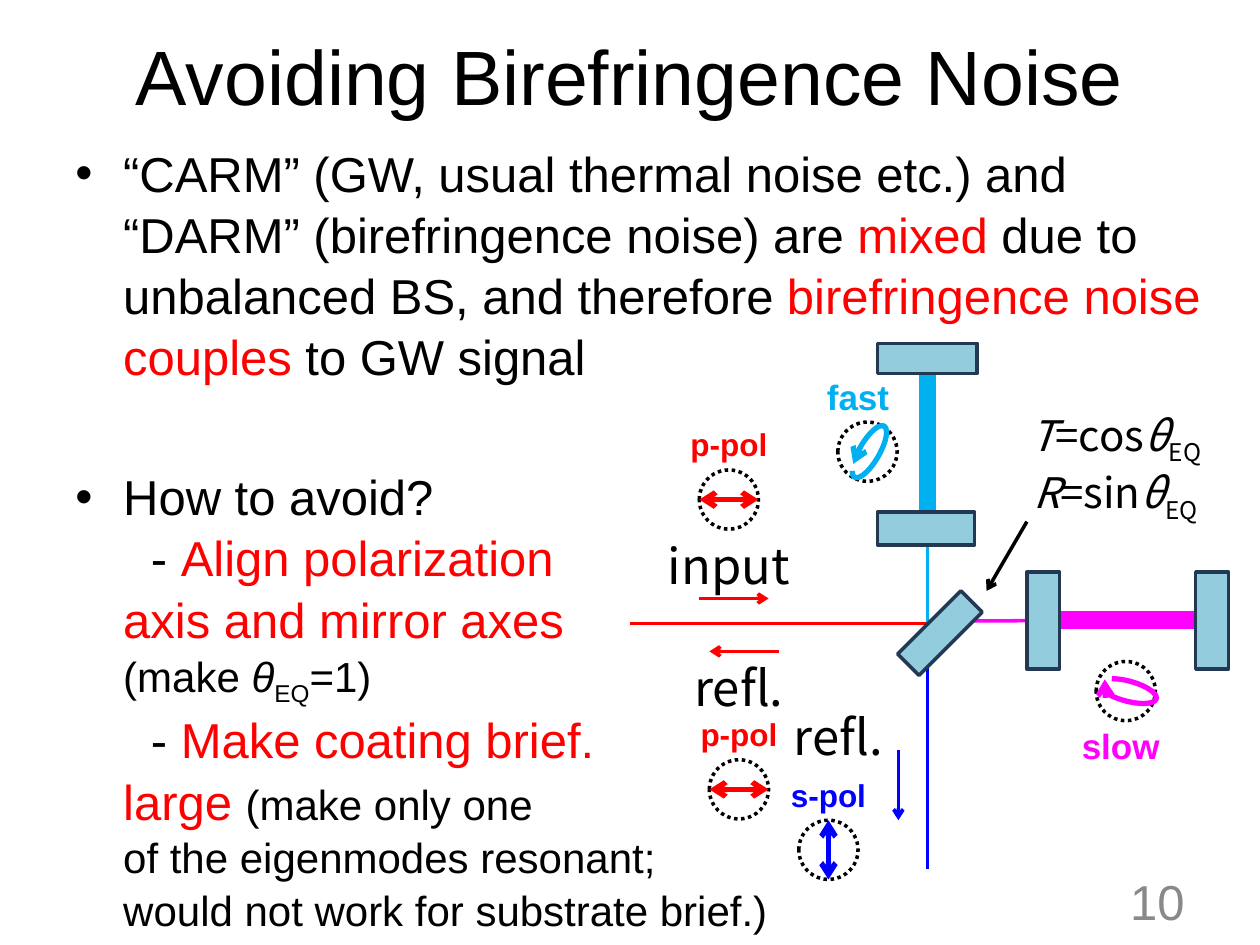
from collections import namedtuple

from lxml import etree
from pptx import Presentation, util as u
from pptx.dml.color import RGBColor
from pptx.enum import dml, shapes, text
from pptx.oxml import ns

BLACK = RGBColor(0x00, 0x00, 0x00)
RED = RGBColor(0xFF, 0x00, 0x00)
BLUE = RGBColor(0x00, 0x00, 0xFF)
CYAN = RGBColor(0x00, 0xB0, 0xF0)
MAGENTA = RGBColor(0xFF, 0x00, 0xFF)
GRAY = RGBColor(0x89, 0x89, 0x89)
MIRROR_FILL = RGBColor(0x93, 0xCD, 0xDD)
MIRROR_LINE = RGBColor(0x23, 0x39, 0x53)
SANS, CJK = "Arial", "Noto Sans CJK JP"
COLUMNS, ROWS = 100, 75
CELL = u.Inches(10) // COLUMNS
CENTER, RIGHT = text.PP_ALIGN.CENTER, text.PP_ALIGN.RIGHT
BADGE = 4.7

Box = namedtuple("Box", "left top width height")


def inside(box, left, top, width, height):
    """Return a box whose corner is measured from the corner of another."""
    return Box(box.left + left, box.top + top, width, height)


def emu(box):
    """Convert a box in grid cells to slide lengths."""
    return [round(value * CELL) for value in box]


def assign(target, values):
    """Set every attribute named in a dict."""
    for name, value in values.items():
        setattr(target, name, value)


def add_element(parent, tag, **attributes):
    """Append a drawing element with its attributes."""
    return etree.SubElement(parent, ns.qn(tag), attributes)


def add_run(paragraph, words, color=BLACK, size=28, font=SANS, bold=False, italic=False, base=0):
    """Add words to a paragraph, with line breaks at newlines."""
    for index, line in enumerate(words.split("\n")):
        if index:
            paragraph.add_line_break()
        if line:
            run = paragraph.add_run()
            run.text = line
            assign(run.font, dict(name=font, size=u.Pt(size), bold=bold, italic=italic))
            run.font.color.rgb = color
            for tag in ("a:ea", "a:cs"):
                add_element(run.font._element, tag, typeface=font)
            if base:
                run.font._element.set("baseline", str(base))


def add_text(slide, box, paragraphs, align=None, anchor=text.MSO_ANCHOR.TOP, inset=True, **style):
    """Add a text box; each paragraph is a list of (words, format) pairs."""
    frame = slide.shapes.add_textbox(*emu(box)).text_frame
    assign(frame, dict(word_wrap=True, vertical_anchor=anchor))
    if not inset:
        assign(frame, dict.fromkeys(
            ("margin_left", "margin_top", "margin_right", "margin_bottom"), 0))
    for index, runs in enumerate(paragraphs):
        paragraph = frame.add_paragraph() if index else frame.paragraphs[0]
        paragraph.alignment = align
        for words, extra in runs:
            add_run(paragraph, words, **{**style, **extra})
    return frame


def add_arrowheads(line, ends):
    """Put open arrowheads on the named ends of a line."""
    for end in ends:
        add_element(line._get_or_add_ln(), f"a:{end}End", type="arrow")


def add_line(slide, box, start, end, color, width=2, ends=()):
    """Draw a straight line between two points of a box."""
    points = [round(value * CELL) for x, y in (start, end)
              for value in (box.left + x, box.top + y)]
    connector = slide.shapes.add_connector(shapes.MSO_CONNECTOR.STRAIGHT, *points)
    connector.line.color.rgb = color
    connector.line.width = u.Pt(width)
    add_arrowheads(connector.line, ends)
    add_element(connector._element.spPr, "a:effectLst")


def add_outline(slide, box, kind, color, width=2, fill=None, rotation=0):
    """Draw a preset shape with an optional fill."""
    shape = slide.shapes.add_shape(kind, *emu(box))
    shape.shadow.inherit = False
    shape.rotation = rotation
    if fill is None:
        shape.fill.background()
    else:
        shape.fill.solid()
        shape.fill.fore_color.rgb = fill
    shape.line.color.rgb = color
    shape.line.width = u.Pt(width)
    return shape


def add_badge(slide, box, label, color, offset, label_width=7.9, size=18, axis=None, tilt=0, ends=()):
    """Draw a dotted circle with its polarization mark and label."""
    circle = add_outline(slide, box, shapes.MSO_SHAPE.OVAL, BLACK)
    circle.line.dash_style = dml.MSO_LINE.ROUND_DOT
    middle = BADGE / 2
    if axis == "horizontal":
        add_line(slide, box, (BADGE, middle), (0, middle), color, 3, ends)
    elif axis == "vertical":
        add_line(slide, box, (middle, BADGE), (middle, 0), color, 3, ends)
    else:
        arc = add_outline(slide, inside(box, 1.7, 0, 1.6, BADGE),
                          shapes.MSO_SHAPE.ARC, color, 3, rotation=tilt)
        for index, degrees in enumerate((112.79, 101.89)):
            arc.adjustments[index] = degrees * 0.6
        add_arrowheads(arc.line, ends)
    add_text(slide, inside(box, *offset, label_width, 3.9), [[(label, {})]], CENTER,
             text.MSO_ANCHOR.MIDDLE, False, color=color, size=size, bold=True)


def add_title(slide, box):
    """Place the slide title."""
    add_text(slide, box, [[("Avoiding Birefringence Noise", {})]], CENTER,
             text.MSO_ANCHOR.MIDDLE, size=44)


def add_body(slide, box):
    """Place the two bullets and the two ways out."""
    red, small = dict(color=RED), dict(size=24)
    frame = add_text(slide, box, [
        [("“CARM” (GW, usual thermal noise etc.) and “DARM” (birefringence noise) are ", {}),
         ("mixed", red), (" due to unbalanced BS, and therefore ", {}),
         ("birefringence noise couples ", red), ("to GW signal", {})],
        [("How to avoid?", {})],
        [("- ", {}), ("Align polarization\naxis and mirror axes\n", red), ("(make ", small),
         ("θ", dict(size=24, italic=True)), ("EQ", dict(size=24, base=-25000)), ("=1)", small)],
        [("- ", {}), ("Make coating brief.\nlarge ", red),
         ("(make only one\nof the eigenmodes resonant;\n"
          "would not work for substrate brief.)", small)],
    ])
    layout = [(-0.38, 0), (-0.38, 45), (0.22, 0), (0.22, 0)]
    for paragraph, (indent, gap) in zip(frame.paragraphs, layout):
        assign(paragraph, dict(space_before=u.Pt(gap), line_spacing=1.04))
        properties = paragraph._p.get_or_add_pPr()
        properties.set("marL", str(u.Inches(0.38)))
        properties.set("indent", str(u.Inches(indent)))
        if indent < 0:
            add_element(properties, "a:buFont", typeface=SANS)
            add_element(properties, "a:buChar", char="•")


def add_page_number(slide, box):
    """Place the page number."""
    add_text(slide, box, [[("10", {})]], RIGHT, text.MSO_ANCHOR.MIDDLE, color=GRAY)


def add_interferometer(slide, box):
    """Draw beams, mirrors, polarization badges and labels."""
    for start, end, color, width in [
        ((23.6, 25.3), (23.6, 45), BLUE, 2),
        ((34.1, 25.2), (44.9, 25.2), MAGENTA, 10),
        ((23.6, 16.6), (23.6, 5.6), CYAN, 10),
        ((23.6, 25.3), (44.9, 25.2), MAGENTA, 2),
        ((23.6, 27.8), (23.6, 8), CYAN, 2),
        ((0, 25.5), (23.8, 25.5), RED, 2),
    ]:
        add_line(slide, box, start, end, color, width)
    for place, rotation in [
        ((23.4, 22.7, 2.4, 7.1), 45), ((22.2, 14.1, 2.6, 7.7), 90),
        ((22.4, 0.5, 2.4, 7.9), 90), ((31.5, 21.4, 2.6, 7.7), 0), ((44.9, 21.4, 2.6, 7.7), 0),
    ]:
        add_outline(slide, inside(box, *place), shapes.MSO_SHAPE.RECTANGLE,
                    MIRROR_LINE, fill=MIRROR_FILL, rotation=rotation)
    for start, end, color in [
        ((5.5, 23.5), (11, 23.5), RED), ((11.8, 27.7), (6.3, 27.7), RED),
        ((21.3, 35.5), (21.3, 41.1), BLUE), ((31.5, 17.4), (28.3, 22.9), BLACK),
    ]:
        add_line(slide, box, start, end, color, ends=["tail"])
    above, both = (-1.6, -4), ("head", "tail")
    linear = dict(offset=above, ends=both)
    for corner, label, color, options in [
        ((5.5, 13.3), "p-pol", RED, dict(linear, axis="horizontal")),
        ((6.3, 36.3), "p-pol", RED, dict(linear, axis="horizontal")),
        ((13.4, 41.1), "s-pol", BLUE, dict(linear, axis="vertical")),
        ((37, 28.5), "slow", MAGENTA,
         dict(offset=(-2.4, 4.7), label_width=8.7, size=20, tilt=105, ends=["tail"])),
        ((16.5, 9.5), "fast", CYAN,
         dict(offset=(-3.9, -4), label_width=11, size=20, tilt=30, ends=["head"])),
    ]:
        add_badge(slide, inside(box, *corner, BADGE, BADGE), label, color, **options)
    for label, corner in [("input", (0, 18)), ("refl.", (0.8, 27.7)), ("refl.", (8.7, 31.6))]:
        add_text(slide, inside(box, *corner, 15.7, 5.7), [[(label, {})]], CENTER, font=CJK)
    italic = dict(italic=True)
    add_text(slide, inside(box, 28.3, 8, 20.5, 9.1), [
        [(symbol, italic), (function, {}), ("θ", italic), ("EQ", dict(base=-25000))]
        for symbol, function in (("T", "=cos"), ("R", "=sin"))], CENTER, font=CJK, size=24)


def main():
    """Build and save the slide."""
    presentation = Presentation()
    assign(presentation, dict(slide_width=COLUMNS * CELL, slide_height=ROWS * CELL))
    slide = presentation.slides.add_slide(presentation.slide_layouts[6])
    add_body(slide, Box(5, 10.7, 95, 14.2))
    add_title(slide, Box(0, -0.3, COLUMNS, 12.5))
    add_page_number(slide, Box(71.7, 69.5, 23.3, 4))
    add_interferometer(slide, Box(50, 24, 48, 46))
    presentation.save("out.pptx")


if __name__ == "__main__":
    main()
